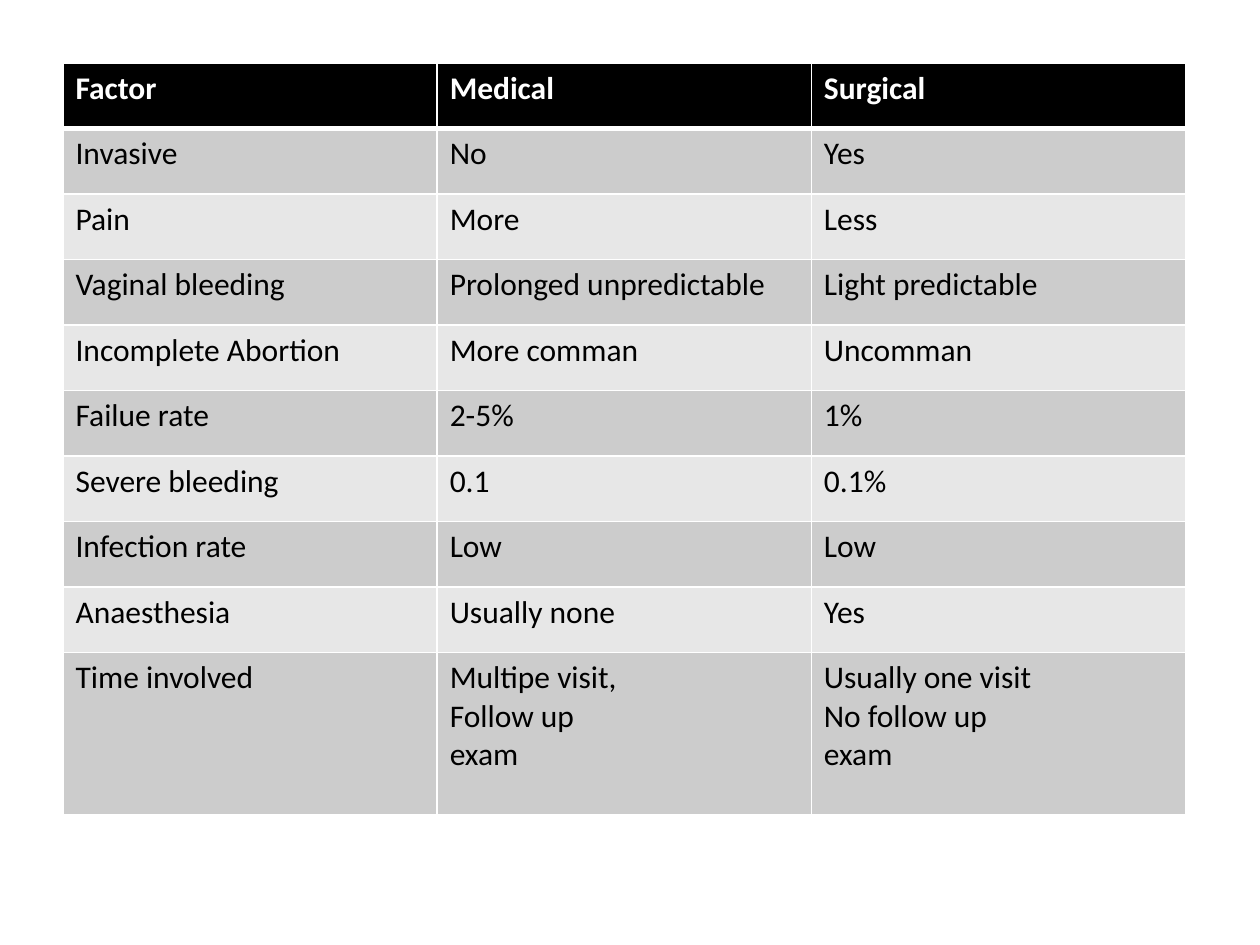
from dataclasses import dataclass

from lxml.etree import SubElement
from pptx import Presentation
from pptx.dml.color import RGBColor
from pptx.oxml.ns import qn
from pptx.util import Inches, Pt


@dataclass(frozen=True)
class Theme:
    font: str = "Calibri"
    size: int = 18
    header_fill: str = "000000"
    header_text: str = "FFFFFF"
    body_text: str = "000000"
    bands: tuple = ("CCCCCC", "E7E7E7")
    border: str = "FFFFFF"
    thin: int = 1
    thick: int = 3


THEME = Theme()

ROWS = [
    ("Factor", "Medical", "Surgical"),
    ("Invasive", "No", "Yes"),
    ("Pain", "More", "Less"),
    ("Vaginal bleeding", "Prolonged unpredictable", "Light predictable"),
    ("Incomplete Abortion", "More comman", "Uncomman"),
    ("Failue rate", "2-5%", "1%"),
    ("Severe bleeding", "0.1", "0.1%"),
    ("Infection rate", "Low", "Low"),
    ("Anaesthesia", "Usually none", "Yes"),
    ("Time involved", "Multipe visit,\nFollow up\nexam",
     "Usually one visit\nNo follow up\nexam"),
]


def write_text(tf, text, *, color, bold=False):
    """Fill a text frame, one paragraph for each line of text."""
    tf.text = text
    for p in tf.paragraphs:
        for r in p.runs:
            r.font.name = THEME.font
            r.font.size = Pt(THEME.size)
            r.font.bold = bold
            r.font.color.rgb = RGBColor.from_string(color)


def set_borders(cell, **widths):
    """Draw cell borders; must run before the fill, which follows them in the XML."""
    tc_pr = cell._tc.get_or_add_tcPr()
    for side in ("L", "R", "T", "B"):
        width = widths.get(side, THEME.thin)
        ln = SubElement(tc_pr, qn(f"a:ln{side}"), w=str(Pt(width)))
        fill = SubElement(ln, qn("a:solidFill"))
        SubElement(fill, qn("a:srgbClr"), val=THEME.border)


def format_cell(cell, text, row):
    is_header = row == 0
    if is_header:
        set_borders(cell, B=THEME.thick)
    elif row == 1:
        set_borders(cell, T=THEME.thick)
    else:
        set_borders(cell)
    fill = THEME.header_fill if is_header else THEME.bands[(row - 1) % 2]
    cell.fill.solid()
    cell.fill.fore_color.rgb = RGBColor.from_string(fill)
    color = THEME.header_text if is_header else THEME.body_text
    write_text(cell.text_frame, text, color=color, bold=is_header)


def add_comparison_table(s, rows, left, top, col_width, row_height, last_height):
    n_rows, n_cols = len(rows), len(rows[0])
    height = row_height * (n_rows - 1) + last_height
    table = s.shapes.add_table(n_rows, n_cols, left, top,
                               col_width * n_cols, height).table
    for column in table.columns:
        column.width = col_width
    for i, values in enumerate(rows):
        table.rows[i].height = last_height if i == n_rows - 1 else row_height
        for j, text in enumerate(values):
            format_cell(table.cell(i, j), text, i)


def main():
    prs = Presentation()
    prs.slide_width, prs.slide_height = Inches(10), Inches(7.5)
    s = prs.slides.add_slide(prs.slide_layouts[6])
    add_comparison_table(s, ROWS, Inches(0.5), Inches(0.5), col_width=Inches(2.97),
                         row_height=Inches(0.52), last_height=Inches(1.29))
    prs.save("out.pptx")


if __name__ == "__main__":
    main()
